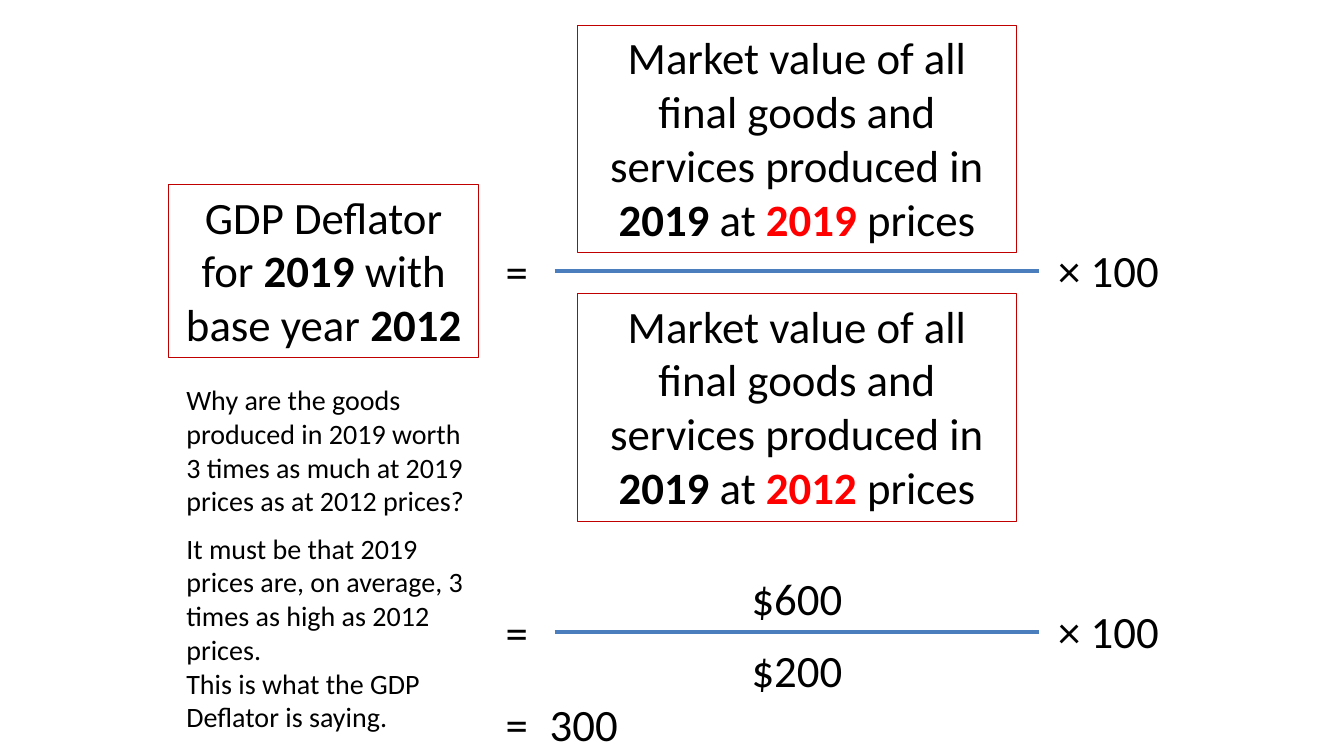
from dataclasses import dataclass

from lxml.etree import SubElement
from pptx import Presentation
from pptx.dml.color import RGBColor
from pptx.enum.shapes import MSO_CONNECTOR, MSO_SHAPE
from pptx.enum.text import MSO_ANCHOR, PP_ALIGN
from pptx.oxml.ns import qn
from pptx.util import Inches, Pt


@dataclass(frozen=True)
class Theme:
    font: str = "Calibri"
    formula_size: int = 32
    note_size: int = 20
    ink: RGBColor = RGBColor(0x00, 0x00, 0x00)
    accent: RGBColor = RGBColor(0xFF, 0x00, 0x00)
    frame: RGBColor = RGBColor(0xC0, 0x00, 0x00)
    bar: RGBColor = RGBColor(0x4B, 0x7E, 0xBC)


@dataclass(frozen=True)
class Box:
    left: float
    top: float
    width: float
    height: float

    def inches(self):
        return [Inches(v) for v in (self.left, self.top, self.width, self.height)]


THEME = Theme()
LINE_HEIGHT = 0.64
BOLD, RED = "bold", "red"


def write(sp, parts, size, align):
    """Fill a shape with (text, style) runs; style is None, BOLD or RED (bold red)."""
    tf = sp.text_frame
    tf.word_wrap = True
    p = tf.paragraphs[0]
    p.alignment = align
    for text, style in parts:
        r = p.add_run()
        r.text = text
        r.font.name = THEME.font
        r.font.size = Pt(size)
        r.font.bold = style is not None
        r.font.color.rgb = THEME.accent if style == RED else THEME.ink


def add_text(s, box, text, size=THEME.formula_size, align=PP_ALIGN.CENTER):
    write(s.shapes.add_textbox(*box.inches()), [(text, None)], size, align)


def add_framed(s, box, parts):
    sp = s.shapes.add_shape(MSO_SHAPE.RECTANGLE, *box.inches())
    sp.shadow.inherit = False
    sp.fill.background()
    sp.line.color.rgb = THEME.frame
    sp.line.width = Pt(0.75)
    sp.text_frame.vertical_anchor = MSO_ANCHOR.TOP
    write(sp, parts, THEME.formula_size, PP_ALIGN.CENTER)


def add_bar(s, left, right, y):
    line = s.shapes.add_connector(
        MSO_CONNECTOR.STRAIGHT, Inches(left), Inches(y), Inches(right), Inches(y))
    line.line.color.rgb = THEME.bar
    line.line.width = Pt(3)
    SubElement(line._element.spPr, qn("a:effectLst"))


def add_equals(s, left, top):
    add_text(s, Box(left, top, 0.75, LINE_HEIGHT), "=")


def add_fraction(s, box, bar_y, term_height, add_term, terms):
    """Draw '= numerator / denominator × 100', terms at the box's top and bottom."""
    add_equals(s, box.left, bar_y - 0.32)
    add_bar(s, box.left + 0.75, box.left + 5.55, bar_y)
    bottom = box.top + box.height - term_height
    for top, term in zip((box.top, bottom), terms):
        add_term(s, Box(box.left + 0.98, top, 4.35, term_height), term)
    add_text(s, Box(box.left + 5.57, bar_y - 0.33, 1.35, LINE_HEIGHT), "× 100")


def add_result(s, box, value):
    add_equals(s, box.left, box.top)
    add_text(s, Box(box.left + 0.58, box.top, 0.92, box.height), value)


def add_notes_column(s, box, notes):
    """Stack notes given as (offset from the box top, height, text)."""
    for offset, height, text in notes:
        add_text(s, Box(box.left, box.top + offset, box.width, height), text,
                 THEME.note_size, PP_ALIGN.LEFT)


def market_value(price_year):
    return [("Market value of all final goods and services produced in ", None),
            ("2019", BOLD), (" at ", None), (price_year, RED), (" prices", None)]


def build_deflator_slide(prs):
    s = prs.slides.add_slide(prs.slide_layouts[6])
    add_framed(s, Box(1.67, 1.83, 3.08, 1.72), [
        ("GDP Deflator for ", None), ("2019", BOLD),
        (" with base year ", None), ("2012", BOLD)])
    add_fraction(s, Box(4.75, 0.25, 6.92, 4.92), 2.69, 2.26, add_framed,
                 [market_value("2019"), market_value("2012")])
    add_fraction(s, Box(4.75, 5.61, 6.92, 1.36), 6.27, LINE_HEIGHT, add_text,
                 ["$600", "$200"])
    add_result(s, Box(4.75, 6.86, 1.5, LINE_HEIGHT), "300")
    add_notes_column(s, Box(1.75, 3.75, 3, 3.58), [
        (0, 1.45, "Why are the goods produced in 2019 worth 3 times as much "
                  "at 2019 prices as at 2012 prices?"),
        (1.47, 1.45, "It must be that 2019 prices are, on average, 3 times "
                     "as high as 2012 prices."),
        (2.81, 0.77, "This is what the GDP Deflator is saying.")])


def main():
    prs = Presentation()
    prs.slide_width = Inches(13.33)
    prs.slide_height = Inches(7.5)
    build_deflator_slide(prs)
    prs.save("out.pptx")


if __name__ == "__main__":
    main()
